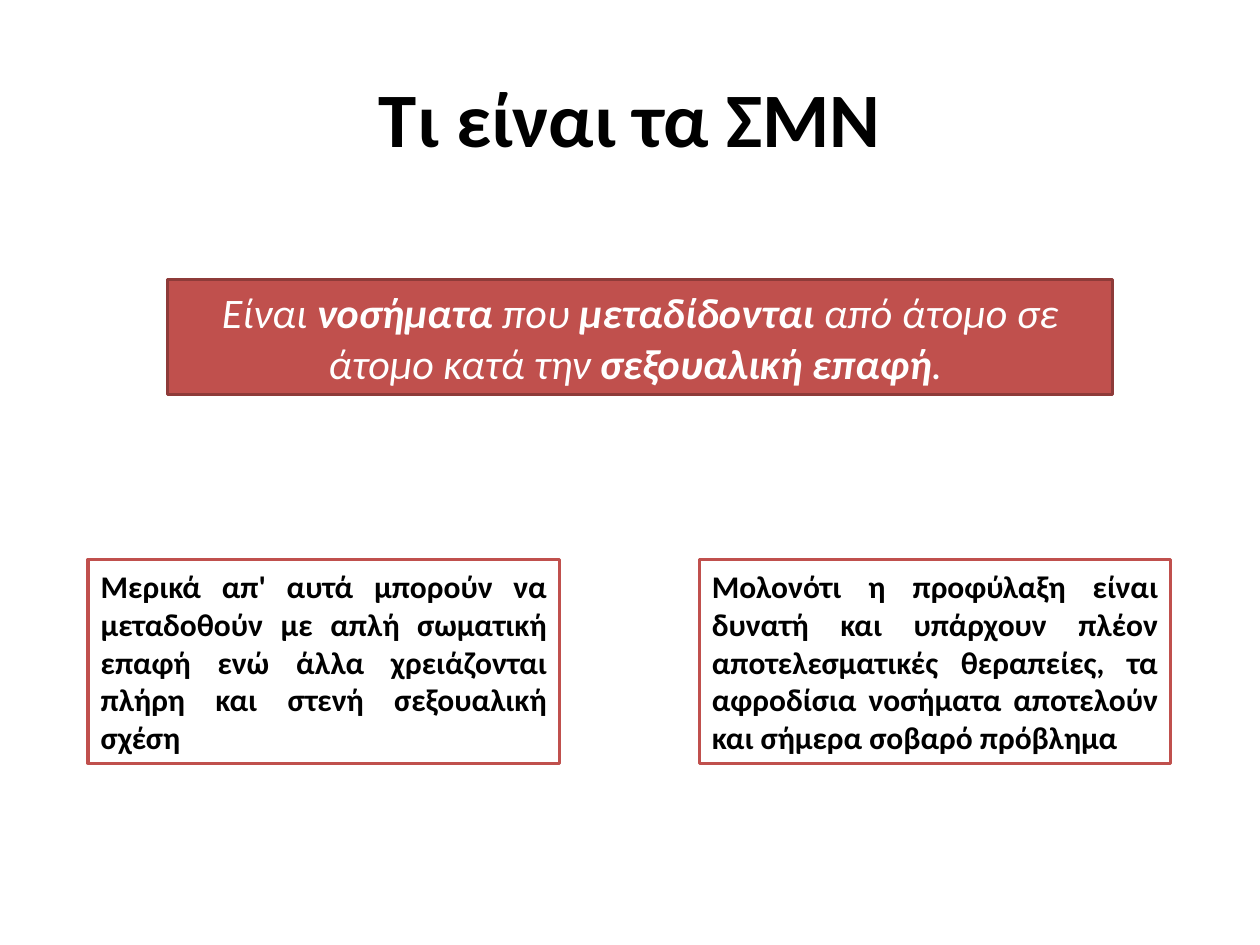
import pptx
import pptx.dml.color
import pptx.enum.shapes
import pptx.enum.text
import pptx.util

Cm = pptx.util.Cm
Pt = pptx.util.Pt
ALIGN = pptx.enum.text.PP_ALIGN

FONT = "Calibri"
COLORS = {
    "text": "000000",
    "light": "FFFFFF",
    "accent": "C0504D",
    "accent_dark": "8E3B39",
}

TITLE = "Τι είναι τα ΣΜΝ"
DEFINITION = [
    ("Είναι ", False),
    ("νοσήματα", True),
    (" που ", False),
    ("μεταδίδονται", True),
    (" από άτομο σε άτομο κατά την ", False),
    ("σεξουαλική επαφή", True),
    (". ", False),
]
NOTES = [
    "Μερικά απ' αυτά μπορούν να μεταδοθούν με απλή σωματική επαφή "
    "ενώ άλλα χρειάζονται πλήρη και στενή σεξουαλική σχέση",
    "Μολονότι η προφύλαξη είναι δυνατή και υπάρχουν πλέον "
    "αποτελεσματικές θεραπείες, τα αφροδίσια νοσήματα αποτελούν "
    "και σήμερα σοβαρό πρόβλημα",
]


def rgb(name):
    return pptx.dml.color.RGBColor.from_string(COLORS[name])


def write_runs(sp, parts, size, color, align, italic=False):
    tf = sp.text_frame
    tf.word_wrap = True
    tf.vertical_anchor = pptx.enum.text.MSO_ANCHOR.MIDDLE
    p = tf.paragraphs[0]
    p.alignment = align
    for text, bold in parts:
        r = p.add_run()
        r.text = text
        r.font.name = FONT
        r.font.size = Pt(size)
        r.font.bold = bold
        r.font.italic = italic
        r.font.color.rgb = rgb(color)


def add_title(s, text):
    sp = s.shapes.add_textbox(Cm(1.27), Cm(0.76), Cm(22.86), Cm(3.18))
    write_runs(sp, [(text, True)], 44, "text", ALIGN.CENTER)


def add_box(s, left, top, width, height, fill, line):
    sp = s.shapes.add_shape(
        pptx.enum.shapes.MSO_SHAPE.RECTANGLE,
        Cm(left), Cm(top), Cm(width), Cm(height),
    )
    sp.shadow.inherit = False
    sp.fill.solid()
    sp.fill.fore_color.rgb = rgb(fill)
    sp.line.color.rgb = rgb(line)
    sp.line.width = Pt(2)
    return sp


def main():
    prs = pptx.Presentation()
    prs.slide_width = Cm(25.4)
    prs.slide_height = Cm(19.05)
    s = prs.slides.add_slide(prs.slide_layouts[6])

    add_title(s, TITLE)

    definition = add_box(s, 3.38, 5.64, 19.05, 2.31, "accent", "accent_dark")
    write_runs(definition, DEFINITION, 24, "light", ALIGN.CENTER, italic=True)

    for i, text in enumerate(NOTES):
        note = add_box(s, 1.78 + i * 12.32, 11.28, 9.5, 4.11, "light", "accent")
        write_runs(note, [(text, True)], 18, "text", ALIGN.JUSTIFY)

    prs.save("out.pptx")


if __name__ == "__main__":
    main()
